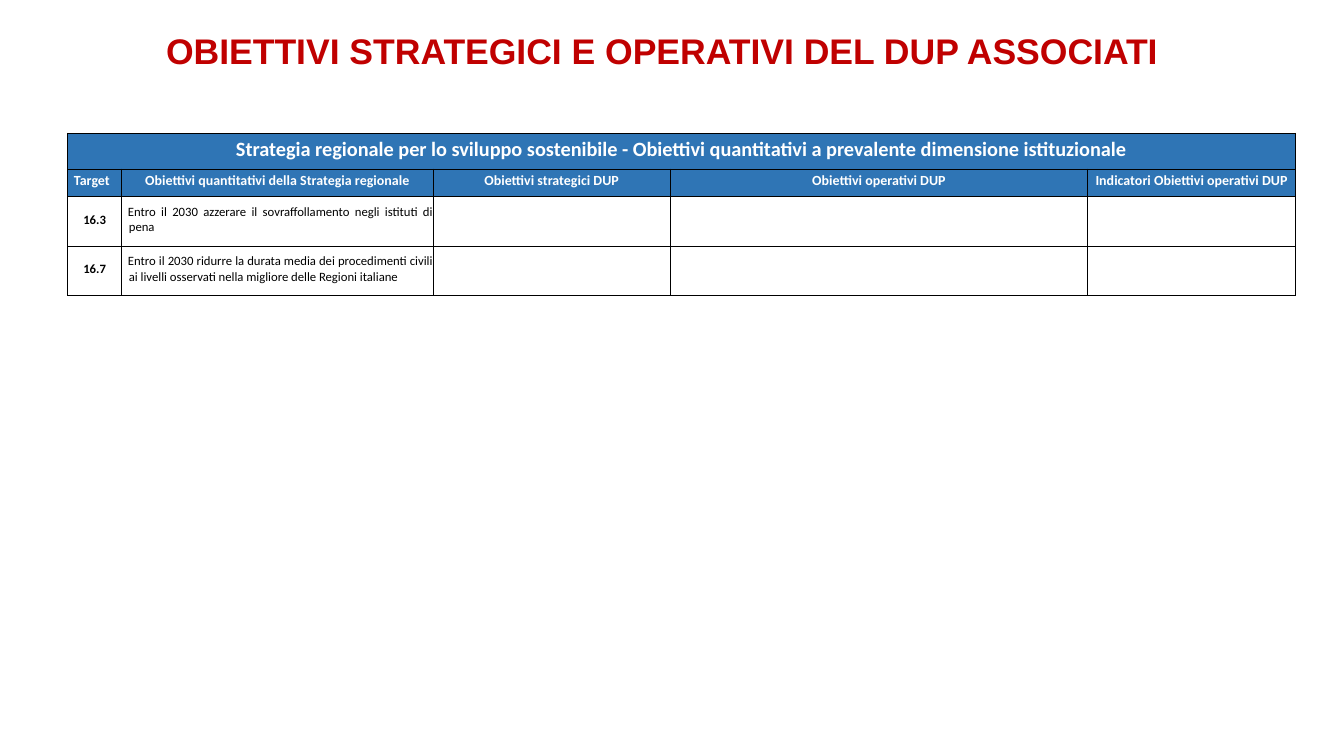
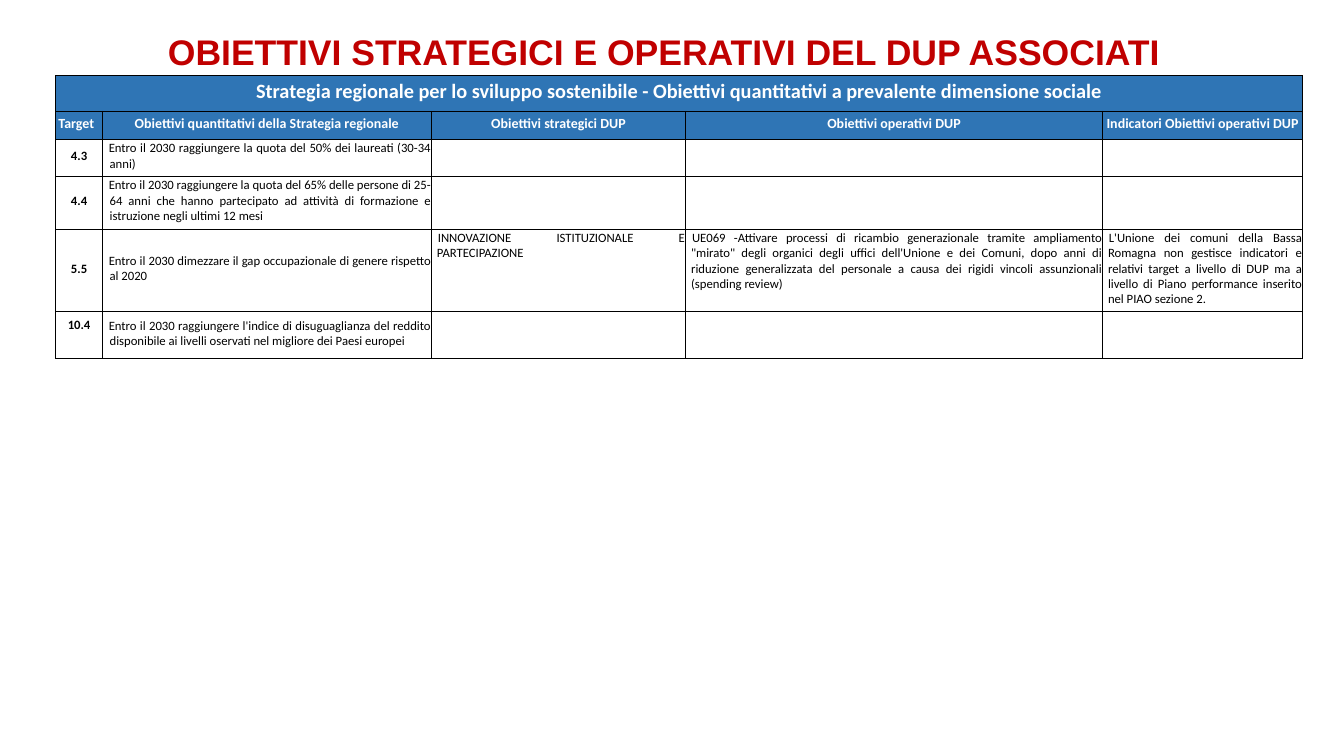
from dataclasses import dataclass

from lxml import etree
from pptx import Presentation
from pptx.dml.color import RGBColor
from pptx.enum.text import MSO_ANCHOR, MSO_AUTO_SIZE, PP_ALIGN
from pptx.oxml.ns import qn
from pptx.util import Pt

CENTER, JUSTIFY = PP_ALIGN.CENTER, PP_ALIGN.JUSTIFY
TOP, MIDDLE = MSO_ANCHOR.TOP, MSO_ANCHOR.MIDDLE
PX = 9144  # 100 px to the inch
TITLE_ONLY = 5


@dataclass(frozen=True)
class Theme:
    red: str = "C00000"
    blue: str = "2F75B5"
    white: str = "FFFFFF"
    black: str = "000000"
    title_font: str = "Arial"
    table_font: str = "Calibri"
    title_size: int = 28
    banner_size: int = 16
    header_size: int = 11
    body_size: int = 10


THEME = Theme()
TITLE = "OBIETTIVI STRATEGICI E OPERATIVI DEL DUP ASSOCIATI"
BANNER = "Strategia regionale per lo sviluppo sostenibile - Obiettivi quantitativi a prevalente dimensione "
HEADERS = ["Target", "Obiettivi quantitativi della Strategia regionale", "Obiettivi strategici DUP",
           "Obiettivi operativi DUP", "Indicatori Obiettivi operativi DUP"]

# Text formats, and indents (left, first line) of the justified columns
TITLE_FORMAT = dict(name=THEME.title_font, size=THEME.title_size, bold=True, color=THEME.red)
BANNER_FORMAT = dict(name=THEME.table_font, size=THEME.banner_size, bold=True, color=THEME.white)
HEADER_FORMAT = {**BANNER_FORMAT, "size": THEME.header_size}
BODY_FORMAT = dict(name=THEME.table_font, size=THEME.body_size, bold=False, color=THEME.black)
TARGET_FORMAT = {**BODY_FORMAT, "bold": True}
GOAL_INDENT, DUP_INDENT = (7, -1), (5, 1)
CELL_MARGINS = dict(margin_left=1, margin_top=1, margin_right=1, margin_bottom=5)

# Content of each slide
SLIDES = [
    dict(
        title_at=(1, 3), table_at=(74, 146), dimension="istituzionale",
        columns=[59, 341, 259, 457, 227], heights=[39, 30, 55, 53], extra_bottom={},
        goals=[
            ["16.3", "Entro il 2030 azzerare il sovraffollamento negli istituti di pena"],
            ["16.7", "Entro il 2030 ridurre la durata media dei procedimenti civili ai livelli "
                     "osservati nella migliore delle Regioni italiane"],
        ],
    ),
    dict(
        title_at=(3, 4), table_at=(61, 83), dimension="sociale",
        columns=[51, 360, 278, 456, 219], heights=[39, 31, 40, 58, 90, 51],
        extra_bottom={"10.4": 17},
        goals=[
            ["4.3", "Entro il 2030 raggiungere la quota del 50% dei laureati (30-34 anni)"],
            ["4.4", "Entro il 2030 raggiungere la quota del 65% delle persone di 25-64 anni che "
                    "hanno partecipato ad attività di formazione e istruzione negli ultimi 12 mesi"],
            ["5.5", "Entro il 2030 dimezzare il gap occupazionale di genere rispetto al 2020",
             "INNOVAZIONE ISTITUZIONALE E PARTECIPAZIONE",
             "UE069 -Attivare processi di ricambio generazionale tramite ampliamento \"mirato\" "
             "degli organici degli uffici dell'Unione e dei Comuni, dopo anni di riduzione "
             "generalizzata del personale a causa dei rigidi vincoli assunzionali (spending review)",
             "L'Unione dei comuni della Bassa Romagna non gestisce indicatori e relativi target a "
             "livello di DUP ma a livello di Piano performance inserito nel PIAO sezione 2."],
            ["10.4", "Entro il 2030 raggiungere l'indice di disuguaglianza del reddito disponibile "
                     "ai livelli oservati nel migliore dei Paesi europei"],
        ],
    ),
]


def write_text(text_frame, text, text_format, alignment):
    """Write one formatted paragraph and return it."""
    paragraph = text_frame.paragraphs[0]
    paragraph.alignment = alignment
    run = paragraph.add_run()
    run.text = text
    values = {**text_format, "size": Pt(text_format["size"])}
    run.font.color.rgb = RGBColor.from_string(values.pop("color"))
    for attribute, value in values.items():
        setattr(run.font, attribute, value)
    return paragraph


def style_cell(cell, fill):
    """Set margins, fill and black borders of a cell."""
    for attribute, value in CELL_MARGINS.items():
        setattr(cell, attribute, value * PX)
    if fill:
        cell.fill.solid()
        cell.fill.fore_color.rgb = RGBColor.from_string(fill)
    else:
        cell.fill.background()
    properties = cell._tc.get_or_add_tcPr()
    for position, side in enumerate(("lnL", "lnR", "lnT", "lnB")):
        border = etree.Element(qn(f"a:{side}"), w=str(Pt(1)))
        solid = etree.SubElement(border, qn("a:solidFill"))
        etree.SubElement(solid, qn("a:srgbClr"), val=THEME.black)
        properties.insert(position, border)


presentation = Presentation()
presentation.slide_width, presentation.slide_height = 1470 * PX, 827 * PX

for content in SLIDES:
    slide = presentation.slides.add_slide(presentation.slide_layouts[TITLE_ONLY])

    # Title
    title = slide.shapes.title
    title.left, title.top = (value * PX for value in content["title_at"])
    title.width, title.height = 1446 * PX, 72 * PX
    title.text_frame.auto_size = MSO_AUTO_SIZE.NONE
    title.text_frame.vertical_anchor = TOP
    paragraph = write_text(title.text_frame, TITLE, TITLE_FORMAT, CENTER)
    paragraph.line_spacing, paragraph.space_before, paragraph.space_after = 1.5, Pt(0), Pt(6)

    # Table grid
    columns, heights = content["columns"], content["heights"]
    left, top = content["table_at"]
    table = slide.shapes.add_table(len(heights), len(columns), left * PX, top * PX,
                                   sum(columns) * PX, sum(heights) * PX).table
    table.first_row = table.horz_banding = False
    for column, width in zip(table.columns, columns):
        column.width = width * PX
    for index, height in enumerate(heights):
        table.rows[index].height = height * PX
        for cell in table.rows[index].cells:
            style_cell(cell, THEME.blue if index < 2 else None)

    # Banner and column headers
    banner = table.cell(0, 0)
    banner.merge(table.cell(0, len(columns) - 1))
    banner.vertical_anchor = MIDDLE
    write_text(banner.text_frame, BANNER + content["dimension"], BANNER_FORMAT, CENTER)
    for index, header in enumerate(HEADERS):
        cell = table.cell(1, index)
        cell.vertical_anchor = MIDDLE
        write_text(cell.text_frame, header, HEADER_FORMAT, CENTER)
    table.cell(1, 0).margin_right = 7 * PX

    # Goals
    for row, goal in enumerate(content["goals"], start=2):
        for index, text in enumerate(goal):
            cell = table.cell(row, index)
            cell.vertical_anchor = MIDDLE if index < 2 else TOP
            if index == 0:
                write_text(cell.text_frame, text, TARGET_FORMAT, CENTER)
                cell.margin_bottom += content["extra_bottom"].get(text, 0) * PX
                continue
            paragraph = write_text(cell.text_frame, text, BODY_FORMAT, JUSTIFY)
            margin, indent = GOAL_INDENT if index == 1 else DUP_INDENT
            paragraph_properties = paragraph._p.get_or_add_pPr()
            paragraph_properties.set("marL", str(margin * PX))
            paragraph_properties.set("indent", str(indent * PX))

presentation.save("out.pptx")
